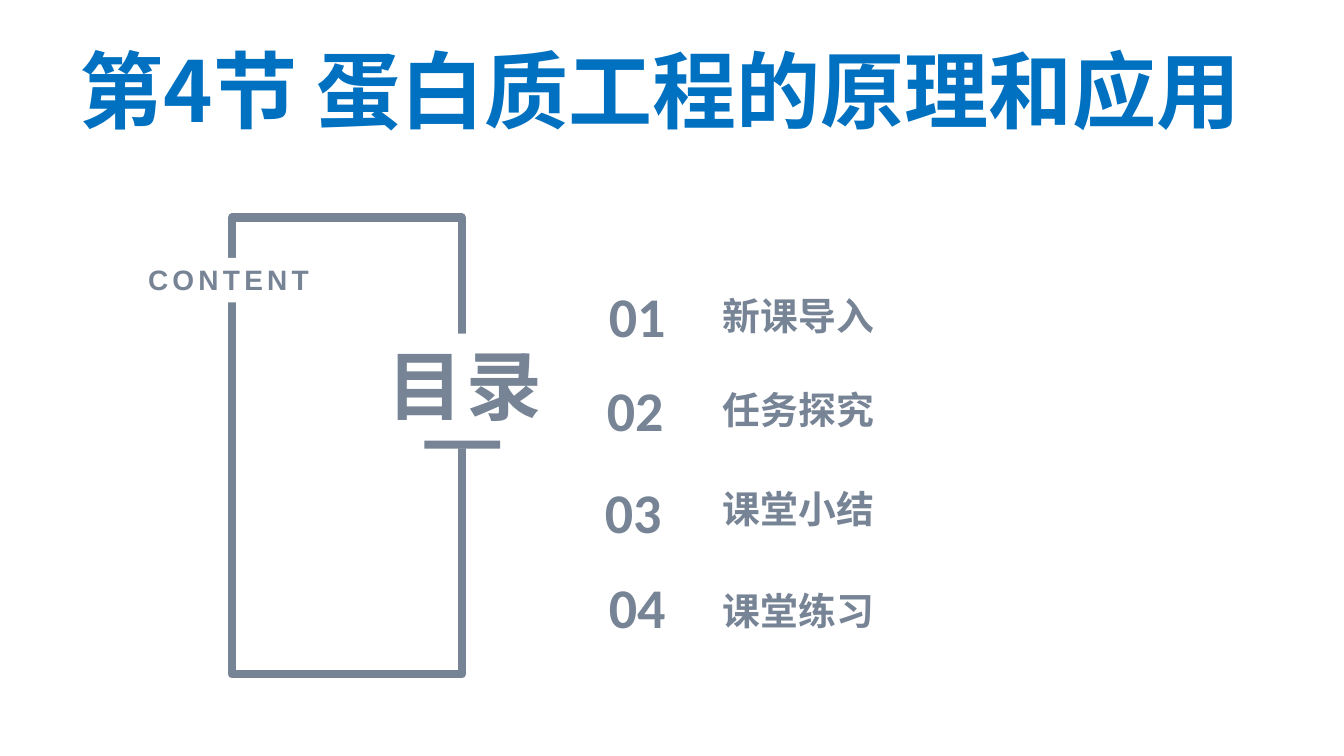
from dataclasses import dataclass

from lxml import etree
from pptx import Presentation
from pptx.dml.color import RGBColor
from pptx.enum import shapes, text
from pptx.oxml import ns
from pptx.util import Inches, Pt


@dataclass(frozen=True)
class Theme:
    slate: RGBColor = RGBColor(0x77, 0x84, 0x95)
    blue: RGBColor = RGBColor(0x00, 0x70, 0xC0)
    white: RGBColor = RGBColor(0xFF, 0xFF, 0xFF)
    latin: str = "Arial"
    digits: str = "Calibri"
    chinese: str = "Noto Sans CJK JP"
    title: int = 60
    heading: int = 54
    number: int = 40
    label: int = 27
    caption: int = 20
    tracking: int = 3
    frame: int = 6


THEME = Theme()

# number, its left and top; label, its top and height
TOPICS = [
    ("01", 5.94, 2.74, "新课导入", 2.86, 0.49),
    ("02", 5.92, 3.67, "任务探究", 3.75, 0.54),
    ("03", 5.90, 4.69, "课堂小结", 4.89, 0.38),
    ("04", 5.94, 5.63, "课堂练习", 5.90, 0.38),
]


def add_rect(s, box, fill=None, line=None):
    sp = s.shapes.add_shape(shapes.MSO_SHAPE.RECTANGLE, *map(Inches, box))
    sp.shadow.inherit = False
    if fill is None:
        sp.fill.background()
    else:
        sp.fill.solid()
        sp.fill.fore_color.rgb = fill
    if line is None:
        sp.line.fill.background()
    else:
        sp.line.color.rgb = line
        sp.line.width = Pt(THEME.frame)
        etree.SubElement(sp.line._get_or_add_ln(), ns.qn("a:round"))
    return sp


def write(sp, words, size, font=THEME.latin, color=THEME.slate, wrap=False,
          align=text.PP_ALIGN.LEFT, anchor=text.MSO_ANCHOR.TOP, spacing=0):
    tf = sp.text_frame
    tf.word_wrap = wrap
    tf.vertical_anchor = anchor
    p = tf.paragraphs[0]
    p.alignment = align
    r = p.add_run()
    r.text = words
    r.font.size = Pt(size)
    r.font.bold = True
    r.font.name = font
    r.font.color.rgb = color
    props = r._r.get_or_add_rPr()
    if spacing:
        props.set("spc", str(spacing * 100))
    # East Asian typeface follows the Latin one
    latin = props.find(ns.qn("a:latin"))
    ea = etree.Element(ns.qn("a:ea"), typeface=THEME.chinese)
    latin.addnext(ea)
    return tf


def add_text(s, box, words, size, **style):
    sp = s.shapes.add_textbox(*map(Inches, box))
    return write(sp, words, size, **style)


def add_topic(s, number, left, top, label, label_top, label_height):
    add_text(s, (left, top, 0.8, 0.77), number, THEME.number,
             font=THEME.digits, anchor=text.MSO_ANCHOR.MIDDLE)
    tf = add_text(s, (6.78, label_top, 4.33, label_height), label, THEME.label,
                  anchor=text.MSO_ANCHOR.BOTTOM)
    tf.margin_left = Inches(0.39)
    tf.margin_top = tf.margin_right = tf.margin_bottom = 0


def main():
    prs = Presentation()
    prs.slide_width, prs.slide_height = Inches(13.33), Inches(7.5)
    s = prs.slides.add_slide(prs.slide_layouts[6])

    # Frame, interrupted by the two headings
    add_rect(s, (2.3, 2.16, 2.28, 4.53), line=THEME.slate)
    heading = add_rect(s, (3.68, 3.31, 1.8, 1.14), fill=THEME.white)
    write(heading, "目录", THEME.heading, wrap=True,
          align=text.PP_ALIGN.RIGHT, spacing=THEME.tracking)
    caption = add_rect(s, (1.37, 2.56, 1.86, 0.44), fill=THEME.white)
    write(caption, "CONTENT", THEME.caption, spacing=THEME.tracking)
    add_rect(s, (4.21, 4.37, 0.75, 0.08), fill=THEME.slate)

    # Title
    add_text(s, (0.35, 0.33, 12.39, 1.11), "第4节 蛋白质工程的原理和应用",
             THEME.title, font=THEME.chinese, color=THEME.blue,
             wrap=True, align=text.PP_ALIGN.CENTER)

    # Topics
    for topic in TOPICS:
        add_topic(s, *topic)

    prs.save("out.pptx")


if __name__ == "__main__":
    main()
